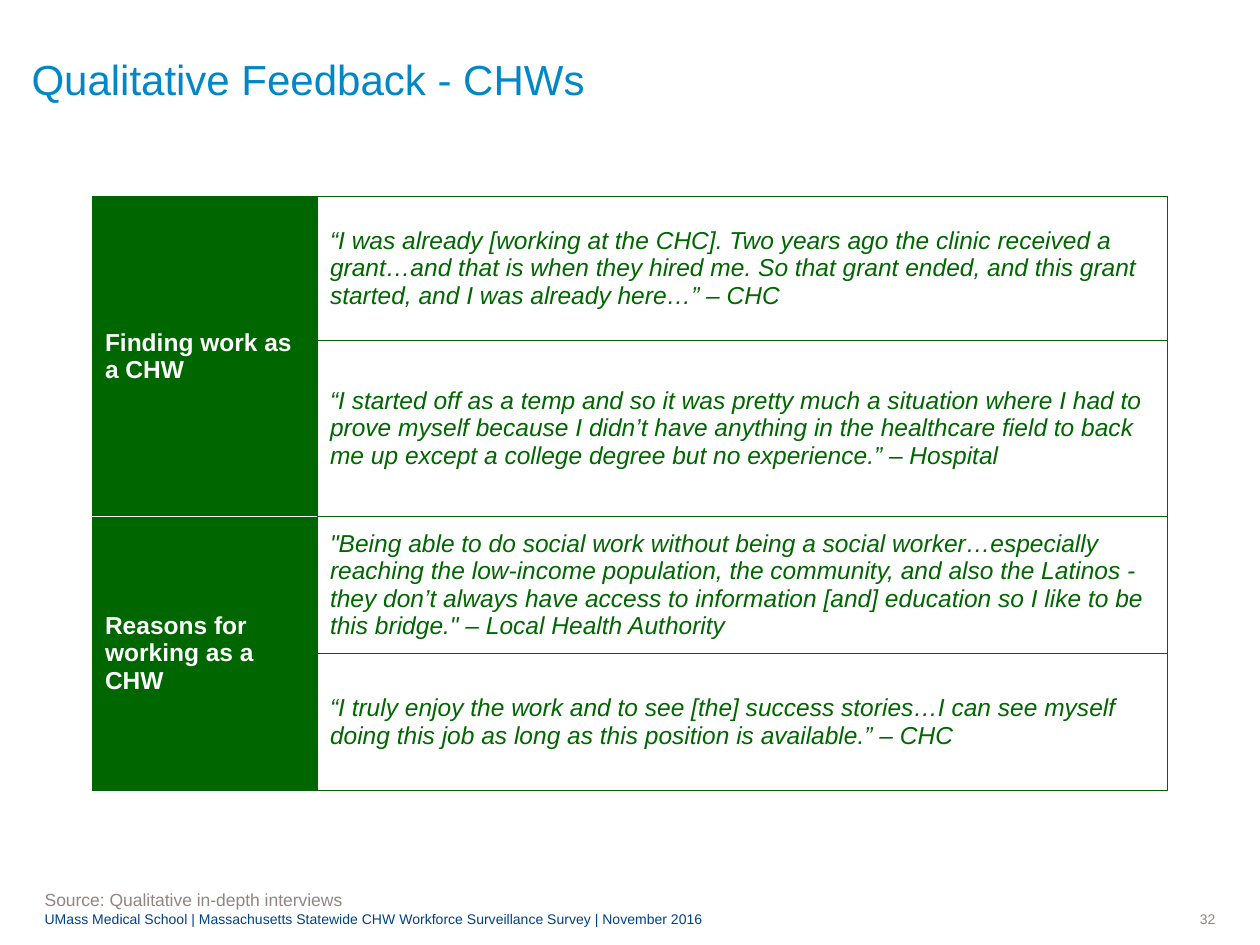
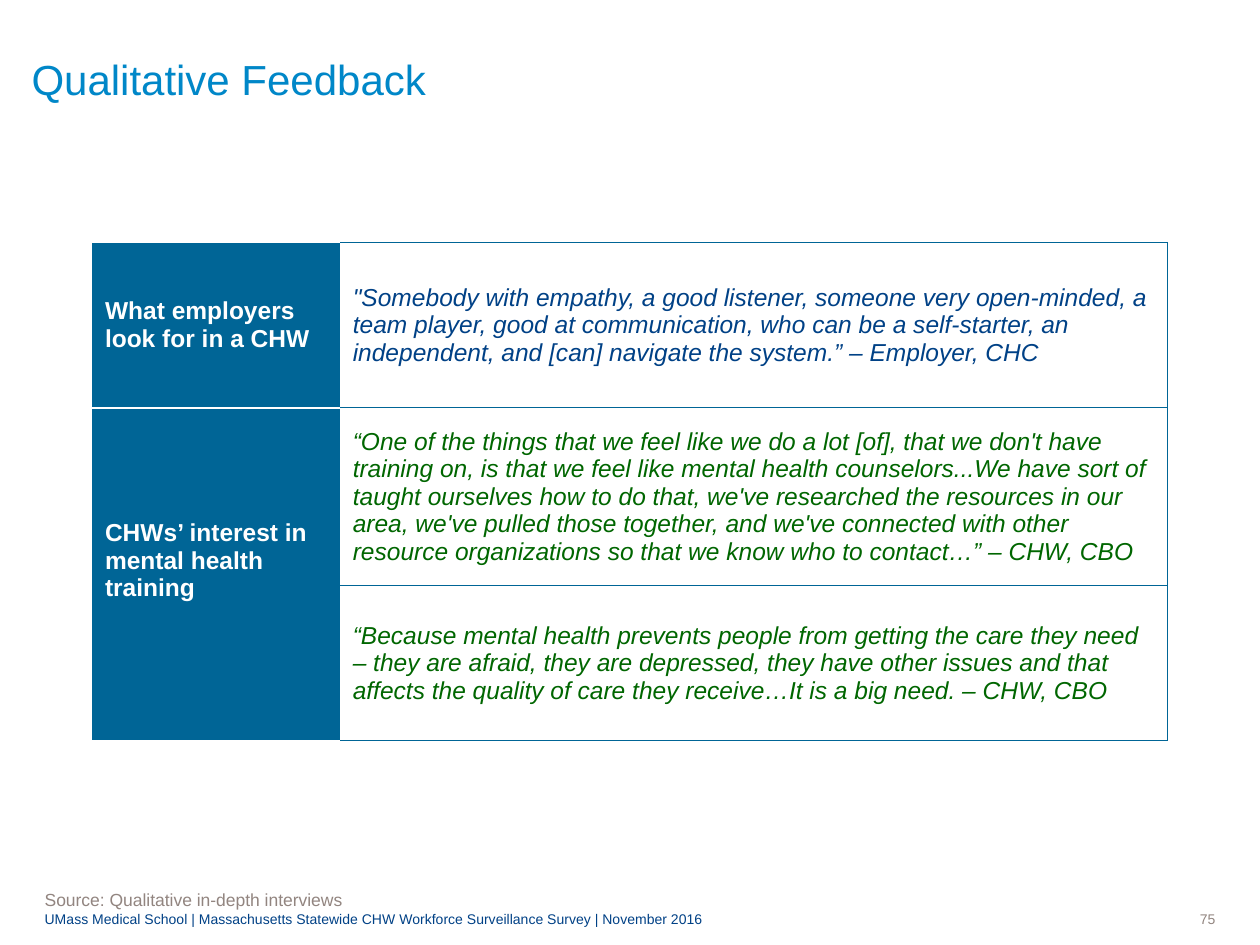
from itertools import chain

from lxml import etree
from pptx import Presentation
from pptx import util as u
from pptx.dml import color
from pptx.enum import shapes, text
from pptx.oxml import ns

COLORS = {
    "title": "0087C8",
    "navy": "004186",
    "gray": "928580",
    "green": "006600",
    "teal": "006596",
    "white": "FFFFFF",
}
FONT = "Arial"
FOOTER = (
    "UMass Medical School | Massachusetts Statewide CHW Workforce "
    "Surveillance Survey | November 2016"
)
SOURCE = "Source: Qualitative in-depth interviews"
TITLE_BOX = (18, 8.2, 553.68, 51.12)
SOURCE_BOX = (25.5, 508, 668.88, 11.52)
FOOTER_BOX = (25.5, 519.5, 669, 11.52)
FOOTER_WIDTH, PAGE_WIDTH = 555.84, 102.24
TABLE_LEFT, TABLE_WIDTH = 52.8, 614.4

SLIDES = [
    {
        "title": "Qualitative Feedback - CHWs",
        "page": "32",
        "accent": "green",
        "label_side": ("green", 0.5),
        "label_end": ("green", 0.5),
        "seam": ("green", 0.5),
        "top": 112.32,
        "label_width": 128.6,
        "row_heights": [82.2, 100.6, 78.3, 78.3],
        "topics": [
            ("Finding work as a CHW", 3.6, [
                ("“I was already [working at the CHC]. Two years ago the clinic received a "
                 "grant…and that is when they hired me. So that grant ended, and this grant "
                 "started, and I was already here…” – CHC", "green"),
                ("“I started off as a temp and so it was pretty much a situation where I had "
                 "to prove myself because I didn’t have anything in the healthcare field to "
                 "back me up except a college degree but no experience.” – Hospital", "green"),
            ]),
            ("Reasons for working as a CHW", 3.6, [
                ('"Being able to do social work without being a social worker…especially '
                 "reaching the low-income population, the community, and also the Latinos - "
                 "they don’t always have access to information [and] education so I like to "
                 'be this bridge." – Local Health Authority', "green"),
                ("“I truly enjoy the work and to see [the] success stories…I can see myself "
                 "doing this job as long as this position is available.” – CHC", "green"),
            ]),
        ],
    },
    {
        "title": "Qualitative Feedback",
        "page": "75",
        "accent": "teal",
        "label_side": None,
        "label_end": ("white", 1),
        "seam": None,
        "top": 138.4,
        "label_width": 141.6,
        "row_heights": [94.7, 101.5, 88.7],
        "topics": [
            ("What employers look for in a CHW", 3.6, [
                ('"Somebody with empathy, a good listener, someone very open-minded, a team '
                 "player, good at communication, who can be a self-starter, an independent, "
                 "and [can] navigate the system.” – Employer, CHC", "navy"),
            ]),
            ("CHWs’ interest in mental health training", 19.3, [
                ("“One of the things that we feel like we do a lot [of], that we don't have "
                 "training on, is that we feel like mental health counselors...We have sort "
                 "of taught ourselves how to do that, we've researched the resources in our "
                 "area, we've pulled those together, and we've connected with other resource "
                 "organizations so that we know who to contact…” – CHW, CBO", "green"),
                ("“Because mental health prevents people from getting the care they need – "
                 "they are afraid, they are depressed, they have other issues and that "
                 "affects the quality of care they receive…It is a big need. – CHW, CBO",
                 "green"),
            ]),
        ],
    },
]


def rgb(name):
    return color.RGBColor.from_string(COLORS[name])


def add_run(paragraph, words, size, ink, bold=False, italic=False):
    run = paragraph.add_run()
    run.text = words
    run.font.name = FONT
    run.font.size = u.Pt(size)
    run.font.bold = bold
    run.font.italic = italic
    run.font.color.rgb = rgb(ink)


def write_line(holder, words, size, ink, anchor, align=text.PP_ALIGN.LEFT):
    frame = holder.text_frame
    frame.margin_left = frame.margin_right = frame.margin_top = frame.margin_bottom = 0
    frame.word_wrap = True
    frame.vertical_anchor = anchor
    frame.paragraphs[0].alignment = align
    add_run(frame.paragraphs[0], words, size, ink)


def add_heading(slide, box, words, size, ink, anchor):
    write_line(slide.shapes.add_textbox(*map(u.Pt, box)), words, size, ink, anchor)


def add_footer_band(slide, box, words, ink, align):
    band = slide.shapes.add_shape(shapes.MSO_SHAPE.RECTANGLE, *map(u.Pt, box))
    band.shadow.inherit = False
    band.fill.solid()
    band.fill.fore_color.rgb = rgb("white")
    band.line.fill.background()
    write_line(band, words, 8, ink, text.MSO_ANCHOR.MIDDLE, align)


def add_footer(slide, box, page):
    left, top, width, height = box
    add_footer_band(slide, (left, top, FOOTER_WIDTH, height), FOOTER, "navy",
                    text.PP_ALIGN.LEFT)
    add_footer_band(slide, (left + width - PAGE_WIDTH, top, PAGE_WIDTH, height), page,
                    "gray", text.PP_ALIGN.RIGHT)


def set_borders(cell, **edges):
    properties = cell._tc.get_or_add_tcPr()
    for side in "LRTB":
        line = etree.SubElement(properties, ns.qn(f"a:ln{side}"))
        if edges[side] is None:
            etree.SubElement(line, ns.qn("a:noFill"))
            continue
        ink, width = edges[side]
        line.set("w", str(u.Pt(width)))
        fill = etree.SubElement(line, ns.qn("a:solidFill"))
        etree.SubElement(fill, ns.qn("a:srgbClr"), val=COLORS[ink])


def fill_cell(cell, words, ink, background, **style):
    cell.fill.solid()
    cell.fill.fore_color.rgb = rgb(background)
    cell.vertical_anchor = text.MSO_ANCHOR.MIDDLE
    if words:
        add_run(cell.text_frame.paragraphs[0], words, 14, ink, **style)


def add_feedback_table(slide, box, content):
    accent, seam, label_end = content["accent"], content["seam"], content["label_end"]
    thin, divider = (accent, 0.5), ("white", 1)
    heights, topics = content["row_heights"], content["topics"]
    table = slide.shapes.add_table(len(heights), 2, *map(u.Pt, box)).table
    table.first_row = table.horz_banding = False
    table.columns[0].width = u.Pt(content["label_width"])
    table.columns[1].width = u.Pt(box[2] - content["label_width"])
    for row, row_height in zip(table.rows, heights):
        row.height = u.Pt(row_height)

    quotes = chain.from_iterable(group for _, _, group in topics)
    for row, (quote, ink) in enumerate(quotes):
        cell = table.cell(row, 1)
        set_borders(cell, L=seam, R=thin, T=thin, B=thin)
        fill_cell(cell, quote, ink, "white", italic=True)

    first = 0
    for label, bottom_margin, group in topics:
        last = first + len(group) - 1
        edges = {
            "L": content["label_side"],
            "R": seam,
            "T": divider if first else label_end,
            "B": divider if last < len(heights) - 1 else label_end,
        }
        for row in range(first, last + 1):
            cell = table.cell(row, 0)
            set_borders(cell, **edges)
            fill_cell(cell, label if row == first else "", "white", accent, bold=True)
        table.cell(first, 0).margin_bottom = u.Pt(bottom_margin)
        if last > first:
            table.cell(first, 0).merge(table.cell(last, 0))
        first = last + 1


def add_feedback_slide(deck, content):
    slide = deck.slides.add_slide(deck.slide_layouts[6])
    add_footer(slide, FOOTER_BOX, content["page"])
    table_box = (TABLE_LEFT, content["top"], TABLE_WIDTH, sum(content["row_heights"]))
    add_feedback_table(slide, table_box, content)
    add_heading(slide, SOURCE_BOX, SOURCE, 10, "gray", text.MSO_ANCHOR.TOP)
    add_heading(slide, TITLE_BOX, content["title"], 24, "title", text.MSO_ANCHOR.BOTTOM)


def main():
    deck = Presentation()
    deck.slide_width, deck.slide_height = u.Pt(720), u.Pt(540)
    for content in SLIDES:
        add_feedback_slide(deck, content)
    deck.save("out.pptx")


if __name__ == "__main__":
    main()
